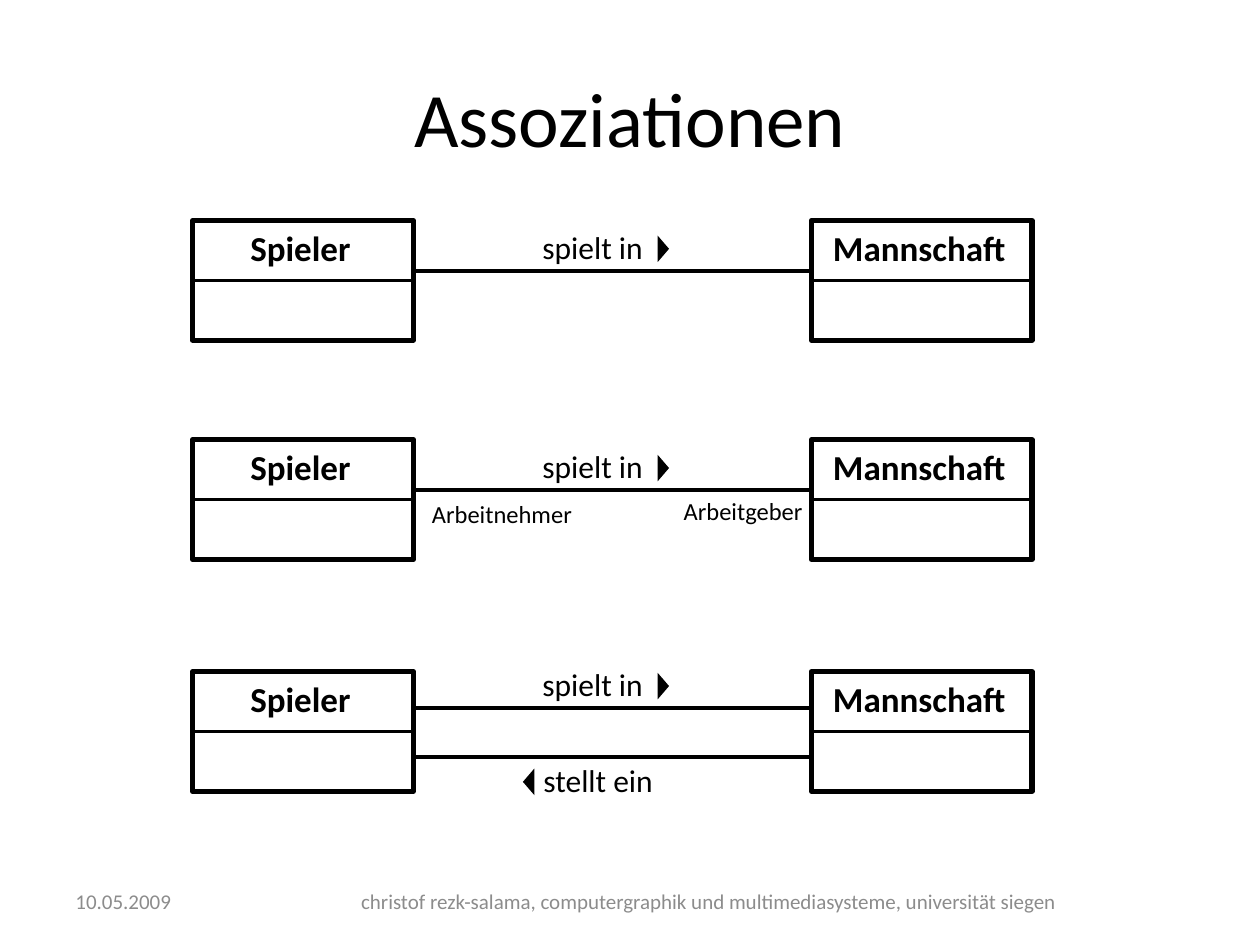
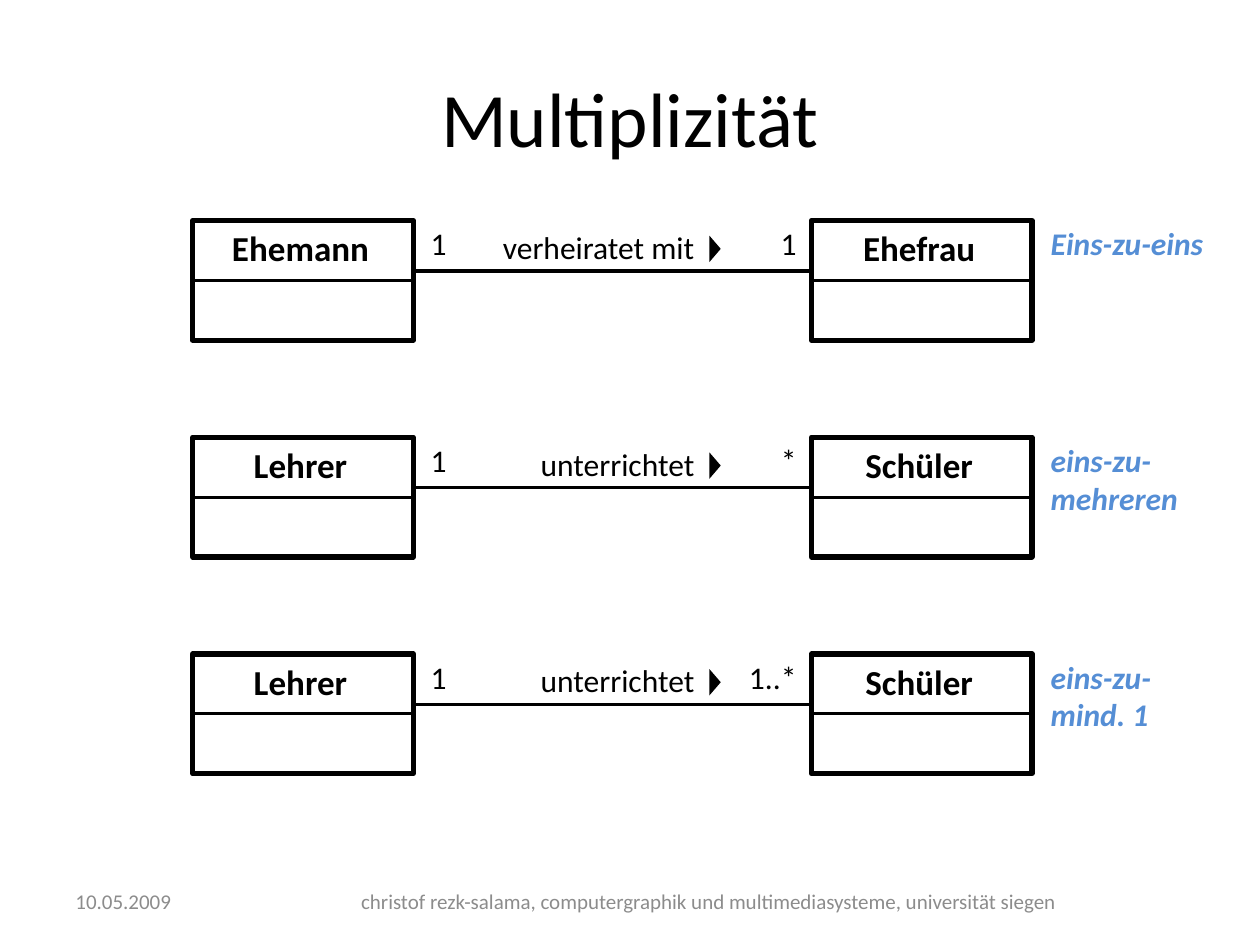
"""Build two slides on UML associations and multiplicities."""
import pptx
import pptx.dml.color
import pptx.enum.shapes
import pptx.enum.text
import pptx.oxml.ns
import pptx.util
from lxml import etree

Inches = pptx.util.Inches
Shape = pptx.enum.shapes.MSO_SHAPE
Align = pptx.enum.text.PP_ALIGN
Anchor = pptx.enum.text.MSO_ANCHOR

COLORS = {"ink": "000000", "paper": "FFFFFF", "footer": "8C8C8C", "note": "558ED5"}
FONT = "Calibri"
LEFT_CLASS, RIGHT_CLASS = 1.53, 6.44
CLASS_WIDTH, CLASS_HEIGHT = 1.75, 0.95
LINE_DROP = 0.4
FIRST_TOP = 1.75
MULTIPLICITY_STEP = 1.72
FOOTERS = [
    ("10.05.2009", 0.5, 1.92, Align.LEFT),
    ("christof rezk-salama, computergraphik und multimediasysteme, universität siegen",
     2.5, 6.25, Align.CENTER),
]


def color(name):
    return pptx.dml.color.RGBColor.from_string(COLORS[name])


def style_text(frame, text, size, ink="ink", align=Align.LEFT, bold=False, italic=False):
    para = frame.paragraphs[0]
    para.text = text
    para.alignment = align
    for span in para.runs:
        span.font.name = FONT
        span.font.size = pptx.util.Pt(size)
        span.font.color.rgb = color(ink)
        span.font.bold = bold
        span.font.italic = italic


def add_text(slide, text, left, top, width, height=0.4, size=18, wrap=False, **style):
    box = slide.shapes.add_textbox(Inches(left), Inches(top), Inches(width), Inches(height))
    box.text_frame.word_wrap = wrap
    box.text_frame.auto_size = pptx.enum.text.MSO_AUTO_SIZE.SHAPE_TO_FIT_TEXT
    style_text(box.text_frame, text, size, **style)
    return box


def add_line(slide, left, right, top, weight):
    line = slide.shapes.add_connector(
        pptx.enum.shapes.MSO_CONNECTOR.STRAIGHT,
        Inches(left), Inches(top), Inches(right), Inches(top))
    line.line.color.rgb = color("ink")
    line.line.width = pptx.util.Pt(weight)
    properties = line._element.spPr
    etree.SubElement(properties, pptx.oxml.ns.qn("a:effectLst"))


def add_filled(slide, kind, left, top, width, height, fill):
    shape = slide.shapes.add_shape(
        kind, Inches(left), Inches(top), Inches(width), Inches(height))
    shape.shadow.inherit = False
    shape.fill.solid()
    shape.fill.fore_color.rgb = color(fill)
    return shape


def add_class(slide, name, left, top):
    frame = add_filled(slide, Shape.RECTANGLE, left, top, CLASS_WIDTH, CLASS_HEIGHT, "paper")
    frame.line.color.rgb = color("ink")
    frame.line.width = pptx.util.Pt(3)
    add_text(slide, name, left, top, 1.71, 0.44, size=20, wrap=True,
             align=Align.CENTER, bold=True)
    add_line(slide, left, left + CLASS_WIDTH, top + CLASS_HEIGHT / 2, 1.75)


def add_class_pair(slide, names, top):
    for name, left in zip(names, (LEFT_CLASS, RIGHT_CLASS)):
        add_class(slide, name, left, top)


def add_direction(slide, left, top, rotation):
    marker = add_filled(slide, Shape.ISOSCELES_TRIANGLE, left, top, 0.21, 0.09, "ink")
    marker.line.fill.background()
    marker.rotation = rotation


def add_link(slide, line_top):
    add_line(slide, LEFT_CLASS + CLASS_WIDTH, RIGHT_CLASS, line_top, 2)


def add_forward_link(slide, verb, left, width, line_top):
    add_text(slide, verb, left, line_top - 0.39, width, align=Align.RIGHT)
    add_direction(slide, left + width - 0.04, line_top - 0.22, 90)
    add_link(slide, line_top)


def add_backward_link(slide, verb, left, width, line_top):
    add_text(slide, verb, left, line_top - 0.02, width, align=Align.RIGHT)
    add_direction(slide, left - 0.11, line_top + 0.15, 270)
    add_link(slide, line_top)


def add_slide(deck, title):
    slide = deck.slides.add_slide(deck.slide_layouts[5])
    heading = slide.shapes.title
    heading.left, heading.top = Inches(0.5), Inches(0.3)
    heading.width, heading.height = Inches(9), Inches(1.25)
    heading.text_frame.vertical_anchor = Anchor.MIDDLE
    style_text(heading.text_frame, title, 44, align=Align.CENTER)
    for text, left, width, align in FOOTERS:
        box = add_text(slide, text, left, 6.95, width, size=12, wrap=True,
                       ink="footer", align=align)
        box.text_frame.auto_size = pptx.enum.text.MSO_AUTO_SIZE.NONE
        box.text_frame.vertical_anchor = Anchor.MIDDLE
    return slide


def build_associations(deck):
    slide = add_slide(deck, "Assoziationen")
    role_top, mutual_top = 3.49, 5.33
    rows = [(FIRST_TOP, LINE_DROP), (role_top, LINE_DROP), (mutual_top, 0.29)]
    for top, drop in rows:
        add_class_pair(slide, ("Spieler", "Mannschaft"), top)
        add_forward_link(slide, "spielt in", 4.19, 1.01, top + drop)
    add_text(slide, "Arbeitgeber", 5.31, role_top + 0.4, 1.16, 0.34, size=14, align=Align.RIGHT)
    add_text(slide, "Arbeitnehmer", 3.31, role_top + 0.42, 1.33, 0.34, size=14, align=Align.RIGHT)
    add_backward_link(slide, "stellt ein", 4.2, 1.08, mutual_top + 0.68)


def build_multiplicities(deck):
    slide = add_slide(deck, "Multiplizität")
    marriage = (("Ehemann", "Ehefrau"), "verheiratet mit", 1.74)
    teaching = (("Lehrer", "Schüler"), "unterrichtet", 1.44)
    rows = [
        (marriage, "1", 0.33, "Eins-zu-eins", 1.42, 0.4),
        (teaching, "*", 0.33, "eins-zu-\nmehreren", 1.22, 0.71),
        (teaching, "1..*", 0.58, "eins-zu-\nmind. 1", 1.04, 0.71),
    ]
    for index, (relation, count, count_width, note, note_width, note_height) in enumerate(rows):
        names, verb, verb_width = relation
        top = FIRST_TOP + index * MULTIPLICITY_STEP
        label_top = top - 0.02
        add_class_pair(slide, names, top)
        add_forward_link(slide, verb, 5.61 - verb_width, verb_width, top + LINE_DROP)
        add_text(slide, "1", 3.32, label_top, 0.33)
        add_text(slide, count, 6.42 - count_width, label_top, count_width, align=Align.RIGHT)
        add_text(slide, note, 8.24, label_top, note_width, note_height,
                 ink="note", bold=True, italic=True)


def main():
    deck = pptx.Presentation()
    deck.slide_width, deck.slide_height = Inches(10), Inches(7.5)
    build_associations(deck)
    build_multiplicities(deck)
    deck.save("out.pptx")


if __name__ == "__main__":
    main()
